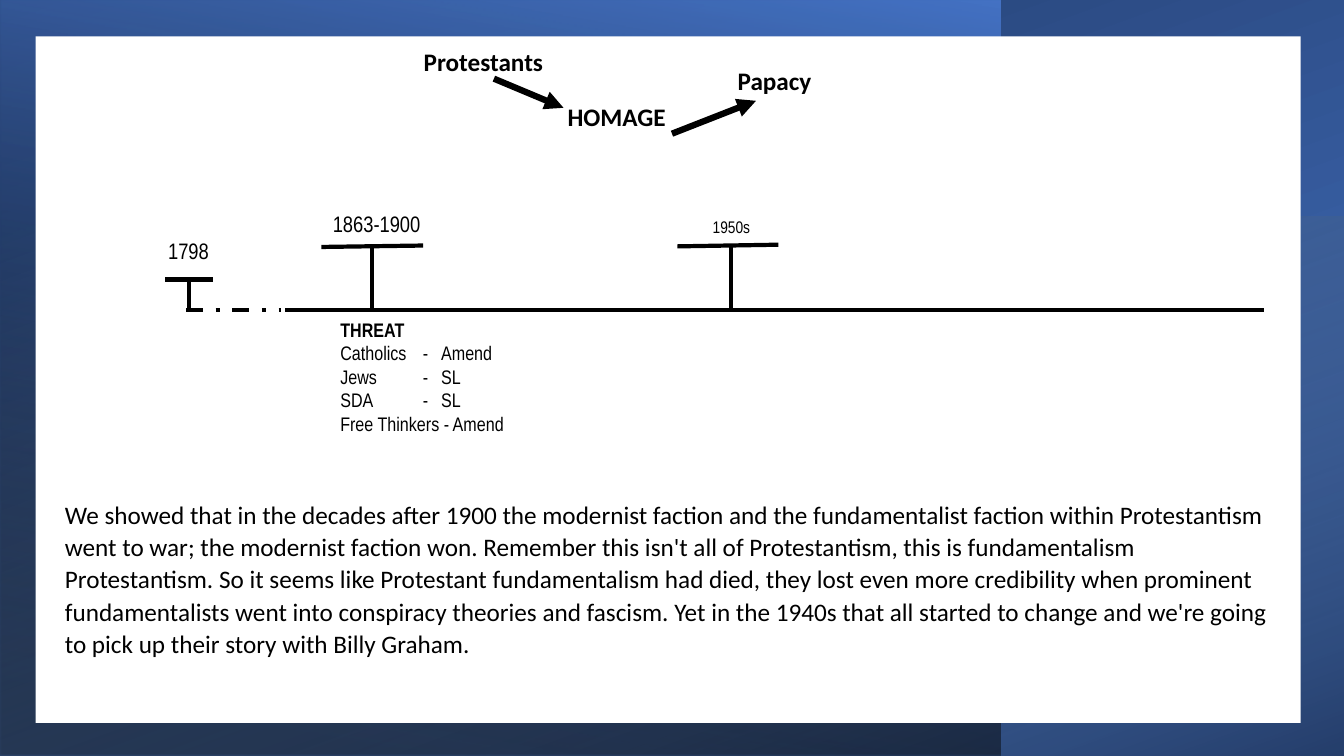
from dataclasses import dataclass

from lxml.etree import SubElement
from pptx import Presentation
from pptx.dml.color import RGBColor
from pptx.enum.dml import MSO_LINE
from pptx.enum.shapes import MSO_CONNECTOR, MSO_SHAPE
from pptx.enum.text import PP_ALIGN
from pptx.oxml.ns import qn
from pptx.util import Pt


@dataclass(frozen=True)
class Theme:
    ink: str = "000000"
    paper: str = "FFFFFF"
    blue: str = "4472C4"
    navy: str = "203864"
    sky: str = "9DC3E6"
    sans: str = "Calibri"
    narrow: str = "Arial Narrow"
    body: int = 18
    year: int = 16
    list: int = 14
    small: int = 12
    rule: float = 3
    arrow: float = 4.5


THEME = Theme()
STORY = (
    "We showed that in the decades after 1900 the modernist faction and the "
    "fundamentalist faction within Protestantism went to war; the modernist "
    "faction won. Remember this isn't all of Protestantism, this is "
    "fundamentalism Protestantism. So it seems like Protestant fundamentalism "
    "had died, they lost even more credibility when prominent fundamentalists "
    "went into conspiracy theories and fascism. Yet in the 1940s that all "
    "started to change and we're going to pick up their story with Billy Graham."
)


def add_rect(slide, box):
    shape = slide.shapes.add_shape(MSO_SHAPE.RECTANGLE, *map(Pt, box))
    shape.shadow.inherit = False
    shape.line.fill.background()
    return shape


def add_panel(slide, box, color):
    shape = add_rect(slide, box)
    shape.fill.solid()
    shape.fill.fore_color.rgb = RGBColor.from_string(color)


def add_blend(slide, box, turn, angle, stops):
    """Mirrored rectangle with a gradient; stops are (place, color, opacity) in %."""
    shape = add_rect(slide, box)
    shape.rotation = turn
    props = shape._element.spPr
    props.get_or_add_xfrm().set("flipH", "1")
    shape.fill.gradient()
    grad = props.find(qn("a:gradFill"))
    for child in list(grad):
        grad.remove(child)
    group = SubElement(grad, qn("a:gsLst"))
    for place, color, alpha in stops:
        stop = SubElement(group, qn("a:gs"), pos=str(place * 1000))
        tint = SubElement(stop, qn("a:srgbClr"), val=color)
        SubElement(tint, qn("a:alpha"), val=str(alpha * 1000))
    SubElement(grad, qn("a:lin"), ang=str(angle * 60000), scaled="0")


def add_text(slide, box, lines, size, font, bold=False, align=PP_ALIGN.CENTER,
             pad=None, space=None, tabs=()):
    frame = slide.shapes.add_textbox(*map(Pt, box)).text_frame
    frame.word_wrap = True
    if pad is not None:
        frame.margin_left = frame.margin_right = Pt(pad)
        frame.margin_top = frame.margin_bottom = Pt(pad)
    for row, line in enumerate(lines):
        para = frame.add_paragraph() if row else frame.paragraphs[0]
        para.text = line
        para.alignment = align
        if space:
            para.line_spacing = space
        if tabs:
            stops = SubElement(para._p.get_or_add_pPr(), qn("a:tabLst"))
            for tab in tabs:
                SubElement(stops, qn("a:tab"), pos=str(Pt(tab)), algn="l")
        para.font.size = Pt(size)
        para.font.name = font
        para.font.bold = bold
        para.font.color.rgb = RGBColor.from_string(THEME.ink)
    return frame


def add_line(slide, start, end, width=THEME.rule, dash=None, head=False):
    line = slide.shapes.add_connector(
        MSO_CONNECTOR.STRAIGHT, *map(Pt, (*start, *end)))
    line.line.width = Pt(width)
    line.line.color.rgb = RGBColor.from_string(THEME.ink)
    if dash:
        line.line.dash_style = dash
    if head:
        SubElement(line.line._get_or_add_ln(), qn("a:tailEnd"), type="triangle")
    SubElement(line._element.spPr, qn("a:effectLst"))


def add_mark(slide, mid, top, base, left, right, tilt=0):
    """Date mark: a stem on the time line with a bar across its top."""
    add_line(slide, (mid, base), (mid, top))
    add_line(slide, (left, top), (right, top - tilt))


def main():
    deck = Presentation()
    deck.slide_width, deck.slide_height = Pt(960), Pt(540)
    slide = deck.slides.add_slide(deck.slide_layouts[6])

    # Backdrop and white sheet
    add_blend(slide, (210, -210, 540, 960), 270, 200,
              [(8, THEME.blue, 100), (100, THEME.navy, 100)])
    add_blend(slide, (0, 0, 714.3, 540), 180, 80,
              [(8, THEME.ink, 52), (100, THEME.blue, 100)])
    add_blend(slide, (287.3, -132.6, 385.4, 960), 270, 20,
              [(0, THEME.sky, 0), (100, THEME.ink, 46)])
    add_panel(slide, (25.4, 26, 903.6, 490.4), THEME.paper)

    # Homage chain
    for word, box in (("Protestants", (296, 30, 98.6, 32)),
                      ("HOMAGE", (388, 69, 105, 34.6)),
                      ("Papacy", (504, 44, 98.6, 33))):
        add_text(slide, box, [word], THEME.body, THEME.sans, bold=True, pad=3)
    for start, end in (((352.8, 56.2), (402.5, 77)), ((480, 95.5), (540, 72))):
        add_line(slide, start, end, THEME.arrow, head=True)

    # Story
    add_text(slide, (39.3, 351.4, 875.5, 123), [STORY], THEME.body, THEME.sans,
             align=PP_ALIGN.LEFT, space=1.07)

    # Time line with its dates
    add_line(slide, (203.6, 221.6), (903, 221.6))
    add_line(slide, (133, 221.3), (201, 221.3), dash=MSO_LINE.DASH_DOT)
    add_mark(slide, 134.8, 199.6, 221.6, 118, 152)
    add_mark(slide, 265.7, 176.4, 222, 229.5, 302.2, tilt=1)
    add_mark(slide, 522.4, 176, 221.6, 483.8, 556, tilt=1.2)
    for date, box, size in (("1798", (108, 165.6, 53.3, 26.6), THEME.year),
                            ("1863-1900", (229.5, 146.7, 79, 26.6), THEME.year),
                            ("1950s", (491.8, 151.2, 61.2, 21.6), THEME.small)):
        add_text(slide, box, [date], size, THEME.narrow)

    # Threat list
    threat = add_text(
        slide, (236, 223.4, 144.7, 92.2),
        ["THREAT", "Catholics\t-\tAmend", "Jews\t-\tSL", "SDA\t-\tSL",
         "Free Thinkers - Amend"],
        THEME.list, THEME.narrow, align=PP_ALIGN.LEFT, tabs=(59, 72))
    threat.paragraphs[0].font.bold = True

    deck.save("out.pptx")


if __name__ == "__main__":
    main()
